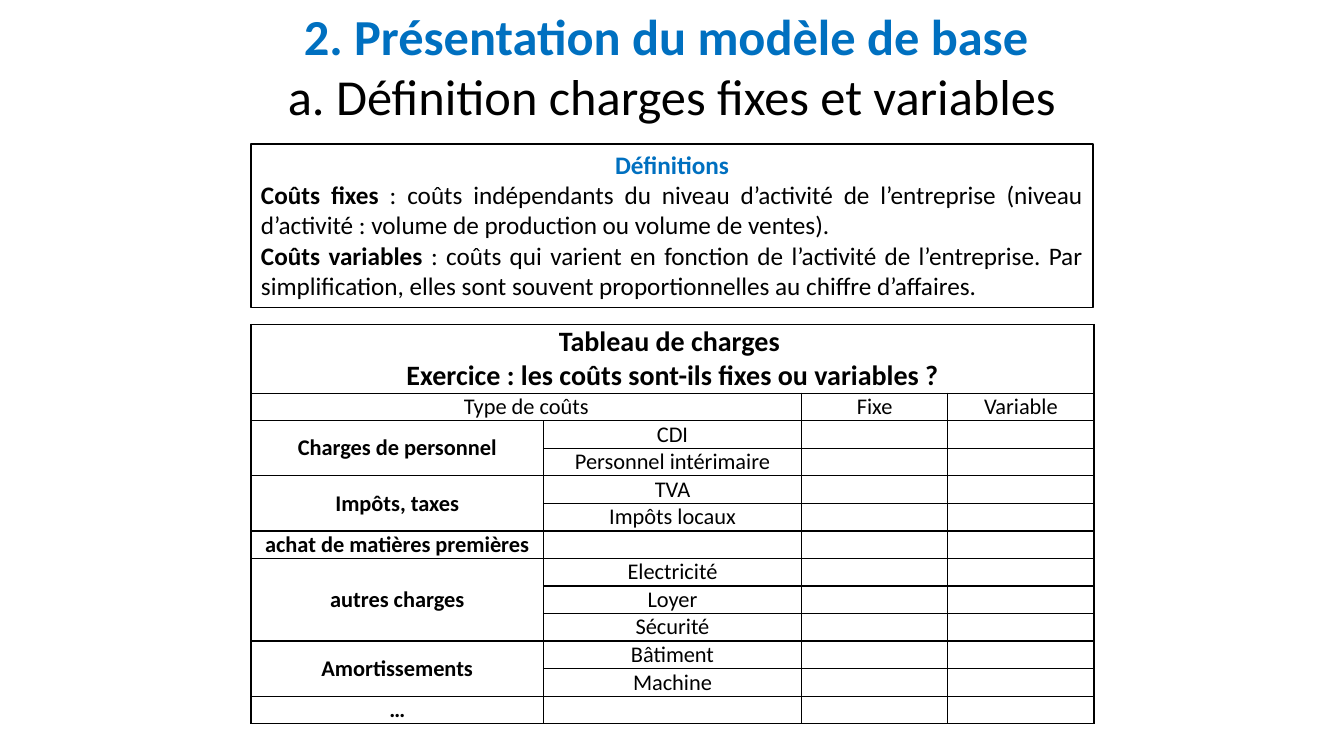
from lxml.etree import SubElement
from pptx import Presentation
from pptx.dml.color import RGBColor
from pptx.enum.shapes import MSO_SHAPE
from pptx.enum.text import MSO_ANCHOR, PP_ALIGN
from pptx.oxml.ns import qn
from pptx.util import Inches, Pt

BLACK, BLUE, WHITE = "000000", "0070C0", "FFFFFF"
CENTER, JUSTIFY = PP_ALIGN.CENTER, PP_ALIGN.JUSTIFY


def color(hex_string):
    return RGBColor.from_string(hex_string)


class CourseSlide:
    """Holds the text style and the slide on which elements are placed."""

    def __init__(self, slide, font="Calibri"):
        self.slide = slide
        self.font = font

    def fill_text(self, frame, paragraphs, size):
        for index, (align, pieces) in enumerate(paragraphs):
            paragraph = frame.add_paragraph() if index else frame.paragraphs[0]
            paragraph.alignment = align
            for words, ink, bold in pieces:
                run = paragraph.add_run()
                run.text = words
                run.font.name = self.font
                run.font.size = Pt(size)
                run.font.bold = bold
                run.font.color.rgb = color(ink)

    def title(self, left, top, width, height, paragraphs, size):
        heading = self.slide.shapes.add_textbox(
            Inches(left), Inches(top), Inches(width), Inches(height))
        frame = heading.text_frame
        frame.word_wrap = True
        frame.vertical_anchor = MSO_ANCHOR.BOTTOM
        frame.margin_left = frame.margin_right = frame.margin_bottom = 0
        self.fill_text(frame, paragraphs, size)

    def framed_text(self, left, top, width, height, paragraphs, size):
        panel = self.slide.shapes.add_shape(
            MSO_SHAPE.RECTANGLE,
            Inches(left), Inches(top), Inches(width), Inches(height))
        panel.shadow.inherit = False
        panel.fill.solid()
        panel.fill.fore_color.rgb = color(WHITE)
        panel.line.color.rgb = color(BLACK)
        panel.line.width = Pt(1)
        panel.text_frame.word_wrap = True
        panel.text_frame.vertical_anchor = MSO_ANCHOR.TOP
        self.fill_text(panel.text_frame, paragraphs, size)

    def style_cell(self, cell, size):
        properties = cell._tc.get_or_add_tcPr()
        for side in ("a:lnL", "a:lnR", "a:lnT", "a:lnB"):
            border = SubElement(properties, qn(side), w=str(Pt(1)))
            fill = SubElement(border, qn("a:solidFill"))
            SubElement(fill, qn("a:srgbClr"), val=BLACK)
        cell.fill.solid()
        cell.fill.fore_color.rgb = color(WHITE)
        cell.vertical_anchor = MSO_ANCHOR.MIDDLE
        cell.margin_left = cell.margin_right = Inches(0.01)
        cell.margin_top = cell.margin_bottom = 0
        end_mark = cell.text_frame.paragraphs[0]._p.get_or_add_endParaRPr()
        end_mark.set("sz", str(size * 100))

    def grid(self, left, top, widths, heights, size):
        table = self.slide.shapes.add_table(
            len(heights), len(widths), Inches(left), Inches(top),
            Inches(sum(widths)), Inches(sum(heights))).table
        table.first_row = table.horz_banding = False
        for column, width in zip(table.columns, widths):
            column.width = Inches(width)
        for row, height in zip(table.rows, heights):
            row.height = Inches(height)
        for cell in table.iter_cells():
            self.style_cell(cell, size)
        return table

    def cell_text(self, table, row, column, lines, size, bold=False, span=(1, 1)):
        cell = table.cell(row, column)
        if span != (1, 1):
            cell.merge(table.cell(row + span[0] - 1, column + span[1] - 1))
        self.fill_text(cell.text_frame,
                       [(CENTER, [(line, BLACK, bold)]) for line in lines], size)


TITLE = [
    (CENTER, [("2. Présentation du modèle de base ", BLUE, True)]),
    (CENTER, [("a. Définition charges fixes et variables", BLACK, False)]),
]
DEFINITIONS = [
    (CENTER, [("Définitions", BLUE, True)]),
    (JUSTIFY, [
        ("Coûts fixes ", BLACK, True),
        (": coûts indépendants du niveau d’activité de l’entreprise (niveau "
         "d’activité : volume de production ou volume de ventes).", BLACK, False)]),
    (JUSTIFY, [
        ("Coûts variables ", BLACK, True),
        (": coûts qui varient en fonction de l’activité de l’entreprise. Par "
         "simplification, elles sont souvent proportionnelles au chiffre "
         "d’affaires.", BLACK, False)]),
]
HEADING = ["Tableau de charges ", "Exercice : les coûts sont-ils fixes ou variables ?"]
CHARGES = [
    ("Charges de personnel", ["CDI", "Personnel intérimaire"]),
    ("Impôts, taxes", ["TVA", "Impôts locaux"]),
    ("achat de matières premières", [""]),
    ("autres charges", ["Electricité", "Loyer", "Sécurité"]),
    ("Amortissements", ["Bâtiment", "Machine"]),
    ("…", [""]),
]


def main():
    presentation = Presentation()
    presentation.slide_width = Inches(13.33)
    presentation.slide_height = Inches(7.5)
    course = CourseSlide(presentation.slides.add_slide(presentation.slide_layouts[6]))

    course.framed_text(2.49, 1.43, 8.35, 1.62, DEFINITIONS, 18)

    row_count = 1 + sum(len(costs) for _, costs in CHARGES)
    heading_height = 0.68
    row_height = (3.96 - heading_height) / row_count
    charges = course.grid(2.49, 3.22, [2.9, 2.56, 1.45, 1.45],
                          [heading_height] + [row_height] * row_count, 16)
    course.cell_text(charges, 0, 0, HEADING, 20, bold=True, span=(1, 4))
    course.cell_text(charges, 1, 0, ["Type de coûts"], 16, span=(1, 2))
    course.cell_text(charges, 1, 2, ["Fixe"], 16)
    course.cell_text(charges, 1, 3, ["Variable"], 16)
    row = 2
    for category, costs in CHARGES:
        course.cell_text(charges, row, 0, [category], 16, bold=True,
                         span=(len(costs), 1))
        for cost in costs:
            if cost:
                course.cell_text(charges, row, 1, [cost], 16)
            row += 1

    course.title(0, 0, 13.33, 1.25, TITLE, 36)
    presentation.save("out.pptx")


if __name__ == "__main__":
    main()
